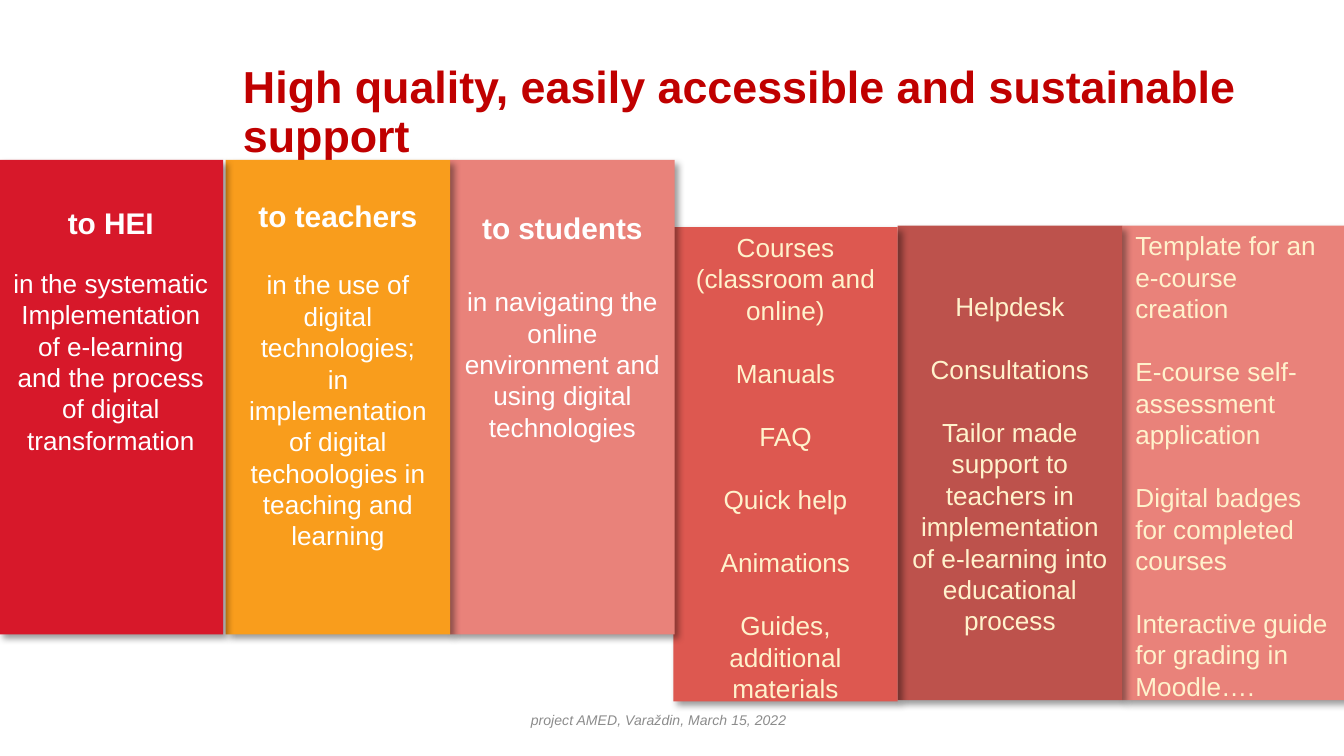
from lxml import etree
from pptx import Presentation
from pptx.dml.color import RGBColor
from pptx.enum import shapes, text
from pptx.oxml.ns import qn
from pptx.util import Inches, Pt

COLORS = {
    "title": "C00000", "footer": "8C8C8C", "white": "FFFFFF", "cream": "FFF2CC",
    "red": "D7182A", "orange": "F99D1C", "pink": "E9827A",
    "coral": "DD5850", "brick": "BD524C", "shadow": "000000",
}
CENTER, LEFT = text.PP_ALIGN.CENTER, text.PP_ALIGN.LEFT


def add_words(paragraph, words, size, color, bold=False, italic=False):
    """Add one run per line of words, with line breaks between them."""
    for number, line in enumerate(words.split("\n")):
        if number:
            paragraph.add_line_break()
        run = paragraph.add_run()
        run.text = line
        run.font.name = "Arial"
        run.font.size = Pt(size)
        run.font.bold = bold
        run.font.italic = italic
        run.font.color.rgb = RGBColor.from_string(COLORS[color])


def add_soft_shadow(panel):
    panel.shadow.inherit = False
    effects = panel._element.spPr.find(qn("a:effectLst"))
    outer = etree.SubElement(effects, qn("a:outerShdw"), blurRad=str(Pt(4)),
                             dist=str(Pt(3)), dir=str(45 * 60000),
                             algn="tl", rotWithShape="0")
    tint = etree.SubElement(outer, qn("a:srgbClr"), val=COLORS["shadow"])
    etree.SubElement(tint, qn("a:alpha"), val="40000")


prs = Presentation()
prs.slide_width, prs.slide_height = Inches(10), Inches(5.625)
slide = prs.slides.add_slide(prs.slide_layouts[6])

# Title and footer
captions = [
    ((1.71, 0.3, 7.9, 1.09), "High quality, easily accessible and sustainable\nsupport",
     24, "title", True, False, LEFT, 0.9),
    ((1.74, 5.21, 6.32, 0.3), "project AMED, Varaždin, March 15, 2022",
     7.5, "footer", False, True, CENTER, 1.0),
]
for place, words, size, color, bold, italic, align, spacing in captions:
    frame = slide.shapes.add_textbox(*map(Inches, place)).text_frame
    frame.word_wrap = True
    frame.vertical_anchor = text.MSO_ANCHOR.MIDDLE
    paragraph = frame.paragraphs[0]
    paragraph.alignment = align
    paragraph.line_spacing = spacing
    add_words(paragraph, words, size, color, bold, italic)

# Panels from back to front: left, top, fill, text colour, top inset, alignment,
# heading, gap before each body paragraph, body paragraphs
panels = [
    (8.35, 1.68, "pink", "cream", 0.03, LEFT, None, [0, 17, 17, 17],
     ["Template for an e-course creation", "E-course self-assessment application",
      "Digital badges for completed courses",
      "Interactive guide for grading in Moodle…."]),
    (6.68, 1.68, "brick", "cream", 0.48, CENTER, None, [0, 17, 17],
     ["Helpdesk", "Consultations",
      "Tailor made support to teachers in implementation of e-learning into "
      "educational process"]),
    (5.01, 1.69, "coral", "cream", 0.03, CENTER, None, [0, 17, 17, 17, 17, 17],
     ["Courses (classroom and online)", "Manuals", "FAQ", "Quick help",
      "Animations", "Guides, additional materials"]),
    (3.35, 1.19, "pink", "white", 0.37, CENTER, "to students", [21.5],
     ["in navigating the online environment and using digital technologies"]),
    (1.68, 1.19, "orange", "white", 0.28, CENTER, "to teachers", [19, 0],
     ["in the use of digital technologies;",
      "in implementation of digital techoologies in teaching and learning"]),
    (-0.01, 1.19, "red", "white", 0.33, CENTER, "to HEI", [14.5, 0],
     ["in the systematic",
      "Implementation of e-learning\nand the process of digital transformation"]),
]
for left, top, fill, color, inset, align, heading, gaps, body in panels:
    panel = slide.shapes.add_shape(shapes.MSO_SHAPE.RECTANGLE, Inches(left),
                                   Inches(top), Inches(1.67), Inches(3.53))
    panel.fill.solid()
    panel.fill.fore_color.rgb = RGBColor.from_string(COLORS[fill])
    panel.line.fill.background()
    add_soft_shadow(panel)

    frame = panel.text_frame
    frame.word_wrap = True
    frame.vertical_anchor = text.MSO_ANCHOR.TOP
    frame.margin_top, frame.margin_bottom = Inches(inset), 0
    entries = [(heading, 16, 0)] if heading else []
    entries += [(words, 14, gap) for words, gap in zip(body, gaps)]
    for number, (words, size, gap) in enumerate(entries):
        paragraph = frame.add_paragraph() if number else frame.paragraphs[0]
        paragraph.alignment = align
        if gap:
            paragraph.space_before = Pt(gap)
        add_words(paragraph, words, size, color, bold=size == 16)

prs.save("out.pptx")
